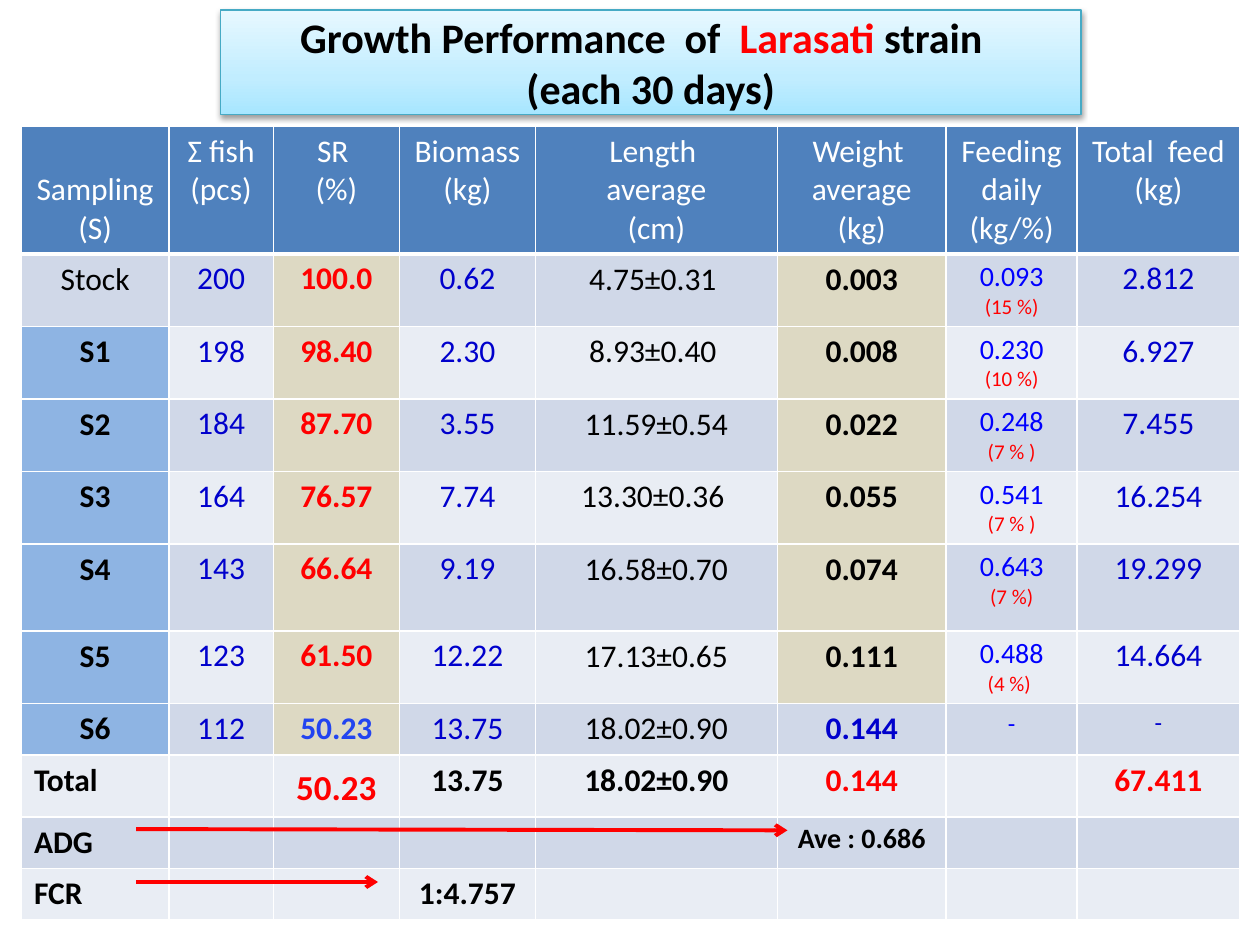
from dataclasses import dataclass, field, replace
from typing import Optional

from lxml import etree
from pptx import Presentation, util as u
from pptx.dml.color import RGBColor
from pptx.enum import shapes, text
from pptx.oxml import ns


@dataclass(frozen=True)
class Theme:
    font: str = "Calibri"
    white: str = "FFFFFF"
    black: str = "000000"
    red: str = "FF0000"
    navy: str = "0000CC"
    blue: str = "0000FF"
    royal: str = "2244F0"
    header: str = "4F81BD"
    label: str = "8EB4E3"
    tan: str = "DDD9C3"
    bands: tuple = ("E9EDF4", "D0D8E8")
    title_line: str = "46AAC5"
    title_stops: tuple = ((0, "A7E6FF"), (35, "C1EDFF"), (100, "E7F8FF"))
    title_size: int = 24
    large: int = 20
    body: int = 18
    medium: int = 16
    dash: int = 14
    small: int = 12


T = Theme()


@dataclass(frozen=True)
class Style:
    color: str = T.black
    bold: bool = False
    size: int = T.body
    fill: Optional[str] = None  # None keeps the colour of the row band
    align: text.PP_ALIGN = text.PP_ALIGN.CENTER
    tight: bool = False  # narrow cell margins
    spacing: Optional[float] = None
    anchor: text.MSO_ANCHOR = text.MSO_ANCHOR.TOP


@dataclass(frozen=True)
class Arrow:
    start: tuple
    end: tuple


@dataclass(frozen=True)
class Row:
    values: tuple
    height: float = 0.41
    overrides: dict = field(default_factory=dict)


HEADER = Style(T.white, fill=T.header)
NUMBER = Style(T.navy, tight=True, spacing=1.15)
LABEL = Style(bold=True, fill=T.label)
RATE = Style(T.red, True, fill=T.tan, tight=True, spacing=1.15)
FEEDING = Style(T.blue, size=T.medium)
BOLD = Style(bold=True)
RED = replace(BOLD, color=T.red)
LEFT = replace(BOLD, align=text.PP_ALIGN.LEFT)
COLUMN_STYLES = (LABEL, NUMBER, RATE, NUMBER, Style(),
                 replace(BOLD, fill=T.tan), FEEDING, NUMBER)
WIDTHS = (1.17, 0.83, 1, 1.08, 1.92, 1.34, 1.04, 1.29)
HEADINGS = ("Sampling\n(S)", "Ʃ fish\n(pcs)", "SR \n(%)", "Biomass\n(kg)",
            "Length \naverage\n(cm)", "Weight \naverage\n(kg)",
            "Feeding\ndaily\n(kg/%)", "Total  feed \n(kg)")
ROWS = (
    Row(HEADINGS, 0.66, {**{c: HEADER for c in range(8)},
                         0: replace(HEADER, anchor=text.MSO_ANCHOR.BOTTOM)}),
    Row(("Stock", "200", "100.0", "0.62", "4.75±0.31 ", "0.003", "0.093\n(15 %)", "2.812"),
        overrides={0: Style()}),
    Row(("S1", "198", "98.40", "2.30", "8.93±0.40 ", "0.008", "0.230\n(10 %)", "6.927")),
    Row(("S2", "184", "87.70", "3.55", "11.59±0.54", "0.022", "0.248\n(7 % )", "7.455")),
    Row(("S3", "164", "76.57", "7.74", "13.30±0.36 ", "0.055", "0.541\n(7 % )", "16.254")),
    Row(("S4", "143", "66.64", "9.19", "16.58±0.70", "0.074", "0.643\n(7 %)", "19.299"), 0.69),
    Row(("S5", "123", "61.50", "12.22", "17.13±0.65", "0.111", "0.488\n(4 %) ", "14.664")),
    Row(("S6", "112", "50.23", "13.75", "18.02±0.90", "0.144", "-", "-"),
        overrides={2: replace(RATE, color=T.royal), 5: replace(BOLD, color=T.navy),
                   6: replace(FEEDING, size=T.dash), 7: replace(NUMBER, size=T.dash)}),
    Row(("Total", "", "50.23", "13.75", "18.02±0.90", "0.144", "", "67.411"),
        overrides={0: LEFT, 2: replace(RED, size=T.large, spacing=1.15),
                   3: BOLD, 4: BOLD, 5: RED, 7: RED}),
    Row(("ADG", "", "", "", "", "Ave : 0.686", "", ""),
        overrides={0: LEFT, 5: replace(BOLD, size=T.medium, tight=True, spacing=1.15)}),
    Row(("FCR", "", "", "1:4.757", "", "", "", ""), overrides={0: LEFT, 3: BOLD}),
)
ARROWS = (Arrow((1.08, 6.58), (6.25, 6.59)), Arrow((1.08, 7), (3, 7)))


def rgb(color: str) -> RGBColor:
    return RGBColor.from_string(color)


def add_node(parent, tag: str, **attrs):
    return etree.SubElement(parent, ns.qn(tag), {k: str(v) for k, v in attrs.items()})


def format_font(font, size: int, color: str, bold: bool) -> None:
    for name, value in {"name": T.font, "size": u.Pt(size), "bold": bold}.items():
        setattr(font, name, value)
    font.color.rgb = rgb(color)


def add_borders(cell, bottom: float) -> None:
    """Put the border lines ahead of the fill, as the schema orders them."""
    pr = cell._tc.get_or_add_tcPr()
    widths = {"a:lnL": 1, "a:lnR": 1, "a:lnT": 1, "a:lnB": bottom}
    for i, (tag, width) in enumerate(widths.items()):
        ln = add_node(pr, tag, w=int(u.Pt(width)))
        add_node(add_node(ln, "a:solidFill"), "a:srgbClr", val=T.white)
        pr.insert(i, ln)


def fill_cell(cell, content: str, style: Style, band: str) -> None:
    cell.fill.solid()
    cell.fill.fore_color.rgb = rgb(style.fill or band)
    cell.vertical_anchor = style.anchor
    if style.tight:
        side = u.Inches(0.07)
        for name, value in {"left": side, "right": side, "top": 0, "bottom": 0}.items():
            setattr(cell, f"margin_{name}", value)
    if not content:
        return
    tf = cell.text_frame
    tf.text = content
    for i, p in enumerate(tf.paragraphs):
        p.alignment = style.align
        if style.spacing:
            p.line_spacing = style.spacing
        percent = i > 0 and style.color == T.blue
        format_font(p.runs[0].font, T.small if percent else style.size,
                    T.red if percent else style.color, style.bold)


def add_growth_table(s) -> None:
    frame = s.shapes.add_table(len(ROWS), len(WIDTHS), u.Inches(0.17), u.Inches(1),
                               u.Inches(9.67), u.Inches(6.23))
    table = frame.table
    for column, width in zip(table.columns, WIDTHS):
        column.width = u.Inches(width)
    for i, row in enumerate(ROWS):
        table.rows[i].height = u.Inches(row.height)
        for j, value in enumerate(row.values):
            style = row.overrides.get(j, COLUMN_STYLES[j] if value else Style())
            cell = table.cell(i, j)
            fill_cell(cell, value, style, T.bands[i % 2])
            add_borders(cell, 1 if i else 3)
    frame.height = u.Inches(6.23)


def add_gradient_and_shadow(sp) -> None:
    pr = sp._element.spPr
    grad = add_node(pr, "a:gradFill", rotWithShape=1)
    stops = add_node(grad, "a:gsLst")
    for pos, color in T.title_stops:
        add_node(add_node(stops, "a:gs", pos=pos * 1000), "a:srgbClr", val=color)
    add_node(grad, "a:lin", ang=270 * 60000, scaled=1)
    sp.line.color.rgb = rgb(T.title_line)
    sp.line.width = u.Pt(0.75)
    shadow = add_node(add_node(pr, "a:effectLst"), "a:outerShdw", blurRad=int(u.Pt(3.1)),
                      dist=int(u.Pt(1.6)), dir=90 * 60000, rotWithShape=0)
    add_node(add_node(shadow, "a:srgbClr", val=T.black), "a:alpha", val=38000)


def add_title(s) -> None:
    sp = s.shapes.title
    box = {"left": 1.75, "top": 0.08, "width": 6.83, "height": 0.83}
    for name, value in box.items():
        setattr(sp, name, u.Inches(value))
    add_gradient_and_shadow(sp)
    tf = sp.text_frame
    tf.auto_size = text.MSO_AUTO_SIZE.NONE
    tf.vertical_anchor = text.MSO_ANCHOR.MIDDLE
    p = tf.paragraphs[0]
    p.alignment = text.PP_ALIGN.CENTER
    for words, color in (("Growth Performance  of  ", T.black), ("Larasati ", T.red),
                         ("strain  ", T.black), ("(each 30 days)", T.black)):
        if words.startswith("("):
            p.add_line_break()
        r = p.add_run()
        r.text = words
        format_font(r.font, T.title_size, color, True)


def add_arrow(s, arrow: Arrow) -> None:
    ends = [u.Inches(v) for v in arrow.start + arrow.end]
    line = s.shapes.add_connector(shapes.MSO_CONNECTOR.STRAIGHT, *ends)
    line.line.color.rgb = rgb(T.red)
    line.line.width = u.Pt(2.25)
    add_node(line.line._get_or_add_ln(), "a:tailEnd", type="arrow")
    add_node(line._element.spPr, "a:effectLst")


def main() -> None:
    prs = Presentation()
    prs.slide_width, prs.slide_height = u.Inches(10), u.Inches(7.5)
    s = prs.slides.add_slide(prs.slide_layouts[5])
    add_growth_table(s)
    add_title(s)
    for arrow in ARROWS:
        add_arrow(s, arrow)
    prs.save("out.pptx")


if __name__ == "__main__":
    main()
